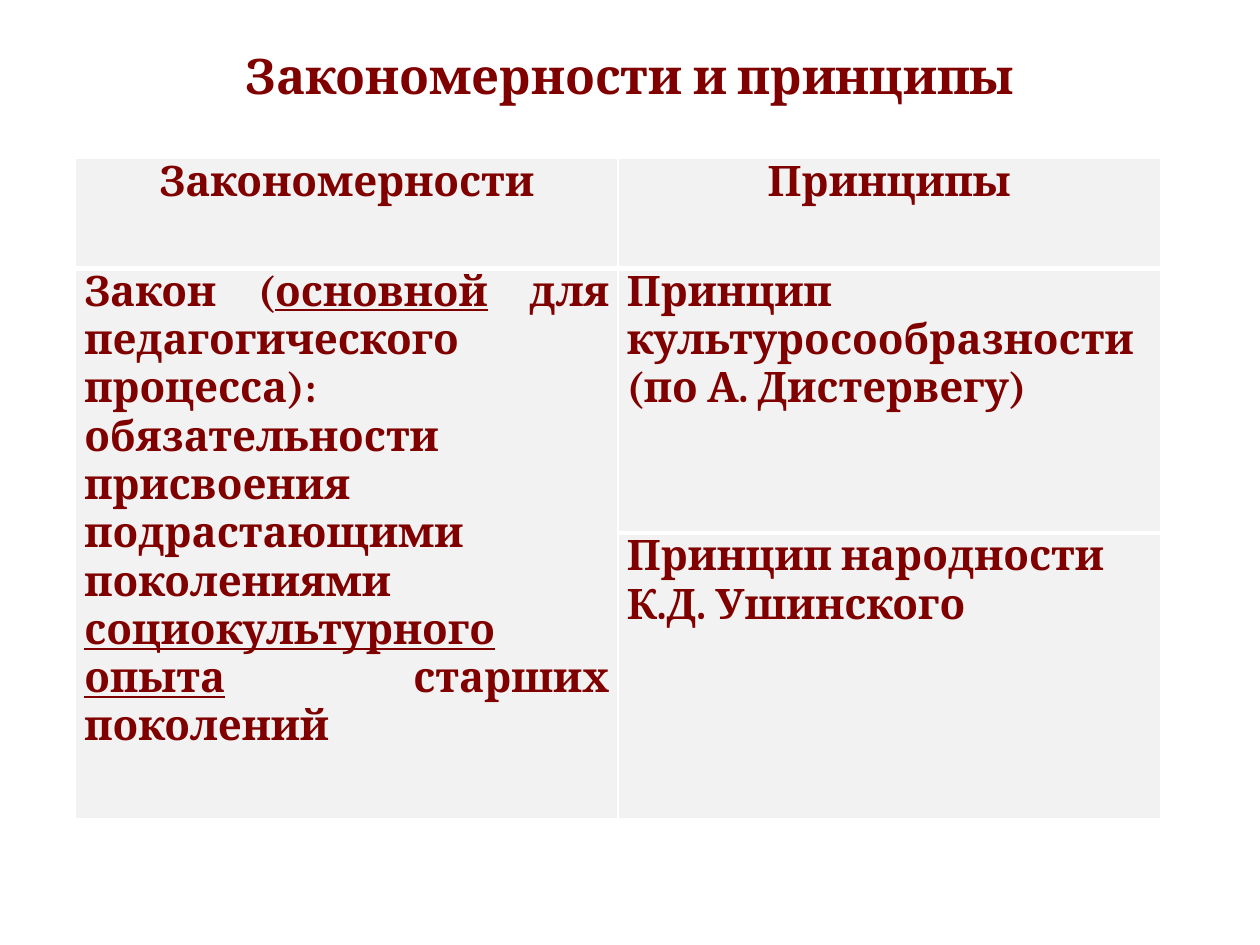
import pptx
import pptx.util
import pptx.dml.color
import pptx.enum.text
import pptx.oxml
import pptx.oxml.ns
from pptx.util import Inches

MAROON = pptx.dml.color.RGBColor(0x80, 0x00, 0x00)
LIGHT_GRAY = pptx.dml.color.RGBColor(0xF2, 0xF2, 0xF2)
ALIGN = pptx.enum.text.PP_ALIGN
ANCHOR = pptx.enum.text.MSO_ANCHOR


def add_span(para, text, size, underline=False):
    span = para.add_run()
    span.text = text
    span.font.name = "Cambria"
    span.font.size = pptx.util.Pt(size)
    span.font.bold = True
    span.font.underline = underline
    span.font.color.rgb = MAROON


def set_borders(cell, top, bottom):
    properties = cell._tc.get_or_add_tcPr()
    for side, width in (("L", 1), ("R", 1), ("T", top), ("B", bottom)):
        properties.append(pptx.oxml.parse_xml(
            f'<a:ln{side} {pptx.oxml.ns.nsdecls("a")} w="{pptx.util.Pt(width)}">'
            f'<a:solidFill><a:srgbClr val="FFFFFF"/></a:solidFill></a:ln{side}>'))


deck = pptx.Presentation()
deck.slide_width = Inches(10)
deck.slide_height = Inches(7.5)
page = deck.slides.add_slide(deck.slide_layouts[6])

# Title
title = page.shapes.add_textbox(Inches(0.69), Inches(0.4), Inches(8.62), Inches(0.45))
frame = title.text_frame
frame.word_wrap = True
frame.vertical_anchor = ANCHOR.MIDDLE
para = frame.paragraphs[0]
para.alignment = ALIGN.CENTER
para.line_spacing = 0.9
add_span(para, "Закономерности и принципы", 28)

# Table grid: the law spans both rows of principles
table = page.shapes.add_table(3, 2, Inches(0.6), Inches(1.26), Inches(8.61), Inches(5.24)).table
for column in table.columns:
    column.width = Inches(4.305)
for row, height in zip(table.rows, (0.87, 2.1, 2.27)):
    row.height = Inches(height)
table.cell(1, 0).merge(table.cell(2, 0))

# Cell contents: (row, column), alignment, paragraphs of (text, underline)
contents = [
    ((0, 0), ALIGN.CENTER, [[("Закономерности", False)]]),
    ((0, 1), ALIGN.CENTER, [[("Принципы", False)]]),
    ((1, 0), ALIGN.JUSTIFY, [[
        ("Закон (", False),
        ("основной", True),
        (" для педагогического процесса): обязательности присвоения "
         "подрастающими поколениями ", False),
        ("социокультурного опыта", True),
        (" старших поколений ", False),
    ]]),
    ((1, 1), ALIGN.LEFT, [[("Принцип культуросообразности", False)],
                          [("(по А. Дистервегу)", False)]]),
    ((2, 1), ALIGN.LEFT, [[("Принцип народности К.Д. Ушинского", False)]]),
]
for (row, column), alignment, paragraphs in contents:
    cell = table.cell(row, column)
    cell.margin_left = cell.margin_right = Inches(0.07)
    cell.margin_top = cell.margin_bottom = 0
    cell.vertical_anchor = ANCHOR.TOP
    for index, spans in enumerate(paragraphs):
        para = cell.text_frame.paragraphs[0] if index == 0 else cell.text_frame.add_paragraph()
        para.alignment = alignment
        for text, underline in spans:
            add_span(para, text, 24, underline)

# Cell fills and white rules, thicker between rows
for row in range(3):
    for column in range(2):
        cell = table.cell(row, column)
        inner_bottom = row == 0 or (row, column) == (1, 1)
        inner_top = row == 1 or (row, column) == (2, 1)
        set_borders(cell, 3 if inner_top else 1, 3 if inner_bottom else 1)
        cell.fill.solid()
        cell.fill.fore_color.rgb = LIGHT_GRAY

deck.save("out.pptx")
